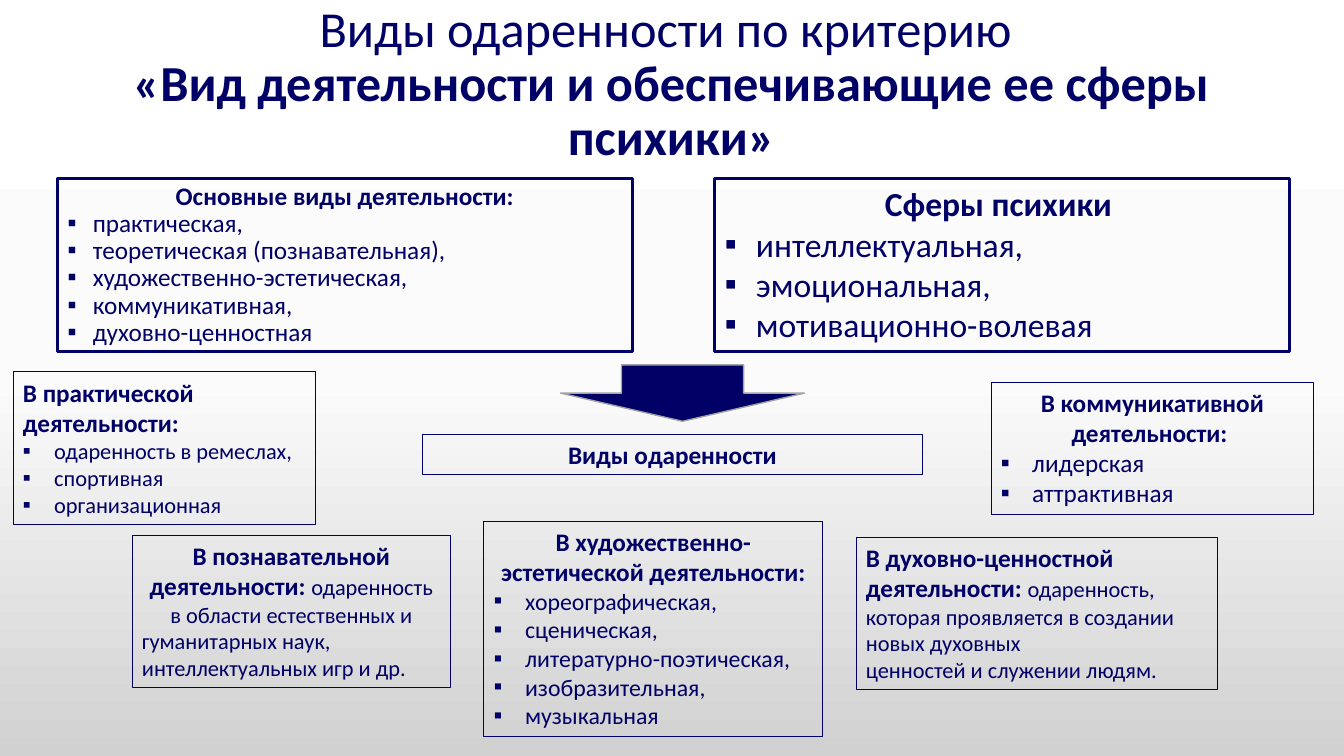
import copy
import dataclasses

import pptx
import pptx.dml.color
import pptx.enum.shapes
import pptx.enum.text
import pptx.oxml.ns
import pptx.util

ALIGN = pptx.enum.text.PP_ALIGN
ANCHOR = pptx.enum.text.MSO_ANCHOR
AUTO_SIZE = pptx.enum.text.MSO_AUTO_SIZE
PX = 9144


@dataclasses.dataclass(frozen=True)
class Theme:
    """Colours, font and type sizes of the slide."""
    ink: str = "000066"
    arrow_edge: str = "A3A3A3"
    backdrop: tuple = ((0, "FFFFFF"), (0.5, "FBFBFB"), (1, "D1D1D1"))
    font: str = "Calibri"
    title: int = 36
    sphere: int = 24
    heading: int = 18
    item: int = 17
    detail: int = 16
    heavy_line: float = 2.25
    thin_line: float = 0.75


THEME = Theme()


def rgb(code):
    """Return the colour for a hex code."""
    return pptx.dml.color.RGBColor.from_string(code)


def scaled(box):
    """Turn a box in px into EMU lengths."""
    return [length * PX for length in box]


def style_run(run, size, bold):
    """Give a run the slide's font and colour."""
    run.font.name = THEME.font
    run.font.size = pptx.util.Pt(size)
    run.font.bold = bold
    run.font.color.rgb = rgb(THEME.ink)


def write_paragraph(frame, spans, align=ALIGN.LEFT, indent=0, spacing=1.0):
    """Add one paragraph of (text, size, bold) spans, bulleted if indented."""
    first = frame.paragraphs[0]
    paragraph = frame.add_paragraph() if first.runs else first
    paragraph.alignment = align
    paragraph.line_spacing = spacing
    paragraph.space_before = pptx.util.Pt(0)
    for text, size, bold in spans:
        run = paragraph.add_run()
        run.text = text
        style_run(run, size, bold)
    qn = pptx.oxml.ns.qn
    properties = paragraph.runs[0].font and paragraph._p.get_or_add_pPr()
    properties.set("marL", str(indent * PX))
    properties.set("indent", str(-indent * PX))
    if indent:
        bullet_font = properties.makeelement(qn("a:buFont"), {"typeface": THEME.font})
        bullet = properties.makeelement(qn("a:buChar"), {"char": "▪"})
        properties.extend([bullet_font, bullet])
    else:
        properties.append(properties.makeelement(qn("a:buNone"), {}))


def outline(shape, width):
    """Draw the panel's border."""
    shape.line.color.rgb = rgb(THEME.ink)
    shape.line.width = pptx.util.Pt(width)


def add_panel(slide, box, line_width=THEME.thin_line):
    """Add an outlined text box and return its text frame."""
    panel = slide.shapes.add_textbox(*scaled(box))
    outline(panel, line_width)
    panel.text_frame.word_wrap = True
    panel.text_frame.auto_size = AUTO_SIZE.SHAPE_TO_FIT_TEXT
    return panel.text_frame


def write_list(frame, heading, items, heading_size, item_size,
               heading_align=ALIGN.CENTER, item_align=ALIGN.LEFT, indent=31, spacing=1.0):
    """Write a bold heading followed by bulleted items."""
    write_paragraph(frame, [(heading, heading_size, True)], heading_align, spacing=spacing)
    for item in items:
        write_paragraph(frame, [(item, item_size, False)], item_align, indent, spacing)


def write_prose(frame, heading, opening, closing, align):
    """Write a heading that runs into its explanation, then a closing line."""
    write_paragraph(frame, [(heading, THEME.heading, True), (opening, THEME.detail, False)], align)
    write_paragraph(frame, [(closing, THEME.detail, False)])


def paint_background(slide):
    """Paint the vertical gradient behind the slide."""
    fill = slide.background.fill
    fill.gradient()
    fill.gradient_angle = 270
    first_stop = next(slide.element.iter(pptx.oxml.ns.qn("a:gs")))
    first_stop.addnext(copy.deepcopy(first_stop))
    for stop, (position, colour) in zip(fill.gradient_stops, THEME.backdrop):
        stop.position = position
        stop.color.rgb = rgb(colour)


def place_title(slide, box):
    """Fill the title placeholder."""
    title = slide.shapes.title
    title.left, title.top, title.width, title.height = scaled(box)
    frame = title.text_frame
    frame.text = "Виды одаренности по критерию \v«Вид деятельности и обеспечивающие ее сферы психики»"
    frame.auto_size = AUTO_SIZE.NONE
    frame.vertical_anchor = ANCHOR.MIDDLE
    paragraph = frame.paragraphs[0]
    paragraph.alignment = ALIGN.CENTER
    paragraph.line_spacing = 0.9
    for run, bold in zip(paragraph.runs, (False, True)):
        style_run(run, THEME.title, bold)


def place_criteria(slide, box):
    """Place the activities and the spheres of the psyche side by side."""
    left, top, width, height = box
    panel_width = 570
    activities = slide.placeholders[1]
    activities.left, activities.top, activities.width, activities.height = scaled(
        (left, top, panel_width, height))
    outline(activities, THEME.heavy_line)
    activities.text_frame.auto_size = AUTO_SIZE.NONE
    write_list(activities.text_frame, "Основные виды деятельности:",
               ["практическая, ", "теоретическая (познавательная), ",
                "художественно-эстетическая, ", "коммуникативная, ", "духовно-ценностная"],
               THEME.heading, THEME.heading, item_align=ALIGN.JUSTIFY, indent=25, spacing=0.9)
    spheres = add_panel(slide, (left + width - panel_width, top, panel_width, height),
                        THEME.heavy_line)
    write_list(spheres, "Сферы психики ",
               ["интеллектуальная,", "эмоциональная,", "мотивационно-волевая"],
               THEME.sphere, THEME.sphere)


def place_transition(slide, box):
    """Place the arrow and the caption it points to."""
    left, top, width, height = box
    arrow = slide.shapes.add_shape(pptx.enum.shapes.MSO_SHAPE.DOWN_ARROW,
                                   *scaled((left + 137, top, 242, 56)))
    arrow.shadow.inherit = False
    arrow.fill.solid()
    arrow.fill.fore_color.rgb = rgb(THEME.ink)
    arrow.line.color.rgb = rgb(THEME.arrow_edge)
    arrow.line.width = pptx.util.Pt(1)
    caption = add_panel(slide, (left, top + height - 40, width, 40))
    write_paragraph(caption, [("Виды одаренности", THEME.heading, True)], ALIGN.CENTER)


def place_kinds(slide, box):
    """Place the five kinds of giftedness around the caption."""
    left, top = box[:2]
    practical = add_panel(slide, (left, top, 300, 151))
    write_list(practical, "В практической деятельности:",
               ["одаренность в ремеслах,", "спортивная", "организационная"],
               THEME.heading, THEME.detail, heading_align=ALIGN.LEFT)
    cognitive = add_panel(slide, (left + 118, top + 162, 316, 151))
    write_prose(cognitive, "В познавательной деятельности: ",
                "одаренность в области естественных и",
                "гуманитарных наук, интеллектуальных игр и др.", ALIGN.CENTER)
    artistic = add_panel(slide, (left + 467, top + 148, 336, 214))
    write_list(artistic, "В художественно-эстетической деятельности:",
               ["хореографическая,", "сценическая,", "литературно-поэтическая,",
                "изобразительная,", "музыкальная"], THEME.heading, THEME.item)
    communicative = add_panel(slide, (left + 970, top + 10, 320, 131))
    write_list(communicative, "В коммуникативной деятельности: ",
               ["лидерская", "аттрактивная"], THEME.heading, THEME.heading)
    spiritual = add_panel(slide, (left + 836, top + 164, 359, 151))
    write_prose(spiritual, "В духовно-ценностной деятельности: ",
                "одаренность, которая проявляется в создании новых духовных",
                "ценностей и служении людям.", ALIGN.LEFT)


def main():
    """Build and save the slide."""
    deck = pptx.Presentation()
    deck.slide_width, deck.slide_height = scaled((1333, 750))
    slide = deck.slides.add_slide(deck.slide_layouts[1])
    paint_background(slide)
    place_title(slide, (91, 12, 1150, 145))
    place_criteria(slide, (57, 177, 1222, 172))
    place_transition(slide, (419, 362, 496, 109))
    place_kinds(slide, (13, 369, 1290, 362))
    deck.save("out.pptx")


if __name__ == "__main__":
    main()
